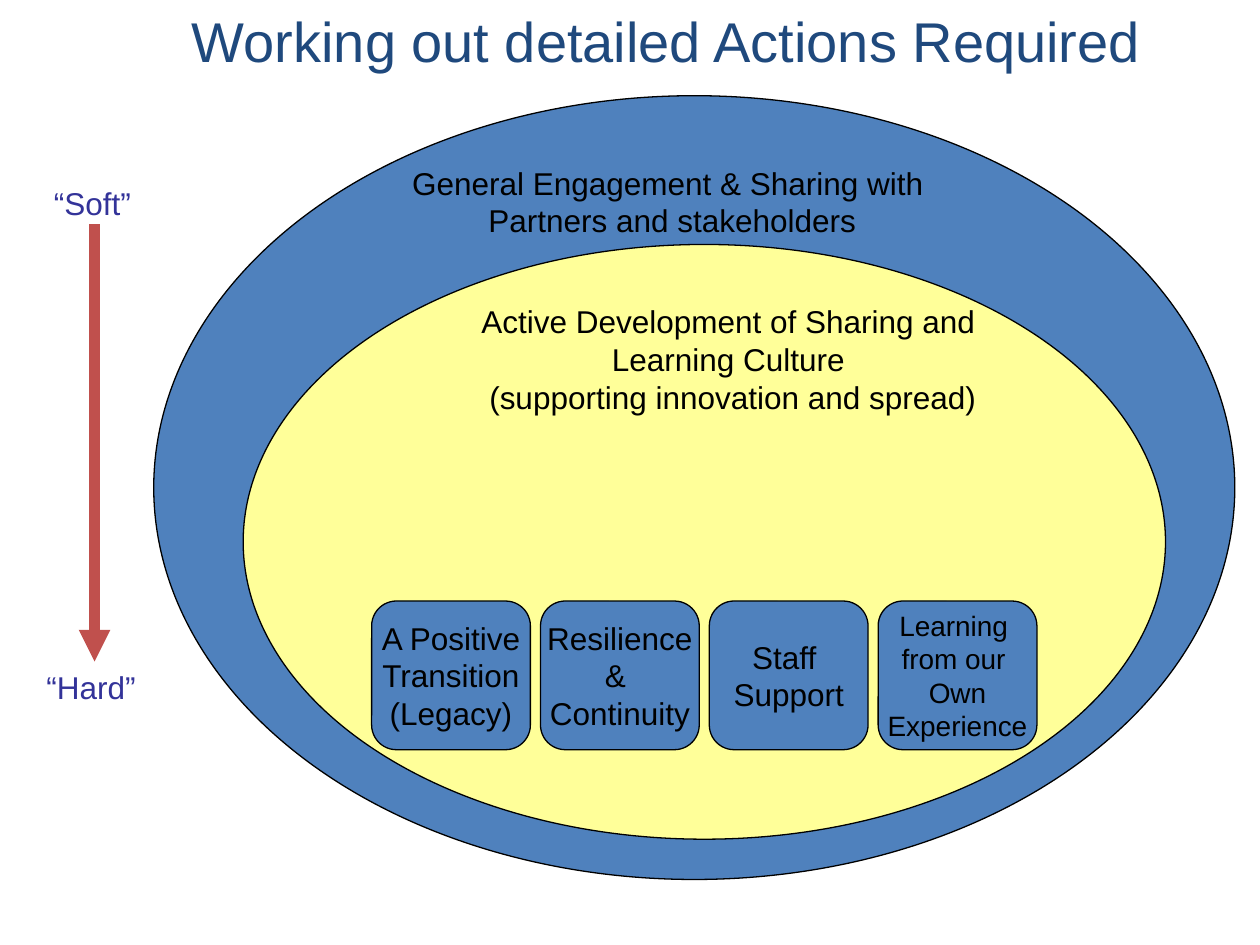
from lxml import etree
from pptx import Presentation
from pptx import util as u
from pptx.dml.color import RGBColor
from pptx.enum import shapes, text
from pptx.oxml.ns import qn

BLACK = RGBColor(0x00, 0x00, 0x00)
BLUE = RGBColor(0x4F, 0x81, 0xBD)
YELLOW = RGBColor(0xFF, 0xFF, 0x99)
INDIGO = RGBColor(0x33, 0x33, 0x99)
RED = RGBColor(0xC0, 0x50, 0x4D)
NAVY = RGBColor(0x1F, 0x49, 0x7D)

FONT = "Arial"
CENTER, LEFT = text.PP_ALIGN.CENTER, text.PP_ALIGN.LEFT
TOP, MIDDLE = text.MSO_ANCHOR.TOP, text.MSO_ANCHOR.MIDDLE
OVAL = shapes.MSO_SHAPE.OVAL
ROUNDED = shapes.MSO_SHAPE.ROUNDED_RECTANGLE

TITLE = "Working out detailed Actions Required"
RINGS = [
    ((1.22, 0.76, 8.58, 6.22), BLUE, (3.17, 1.25, 4.33, 0.7),
     ["General Engagement & Sharing with ", "Partners and stakeholders"]),
    ((1.93, 1.94, 7.32, 4.72), YELLOW, (3.72, 2.35, 4.19, 1),
     ["Active Development of Sharing and ", "Learning Culture ",
      "(supporting innovation and spread)"]),
]
ACTIONS = [
    (["A Positive", "Transition", "(Legacy)"], 18),
    (["Resilience", "& ", "Continuity"], 18),
    (["Staff ", "Support"], 18),
    (["Learning ", "from our ", "Own", "Experience"], 16),
]
SCALE_ENDS = [
    ((0.33, 1.41, 0.81, 0.4), "“Soft”"),
    ((0.27, 5.25, 0.91, 0.4), "“Hard”"),
]
ACTION_LEFT, ACTION_TOP, ACTION_PITCH = 2.95, 4.77, 1.34
ACTION_W, ACTION_H = 1.26, 1.18
SCALE_X, SCALE_TOP, SCALE_BOTTOM = 0.75, 1.78, 5.25


def inches(box):
    return [u.Inches(v) for v in box]


def write(sp, lines, size=18, color=BLACK, align=CENTER, anchor=TOP, wrap=False):
    tf = sp.text_frame
    tf.word_wrap = wrap
    tf.vertical_anchor = anchor
    for i, line in enumerate(lines):
        p = tf.add_paragraph() if i else tf.paragraphs[0]
        p.alignment = align
        r = p.add_run()
        r.text = line
        r.font.name = FONT
        r.font.size = u.Pt(size)
        r.font.color.rgb = color


def add_outlined(s, kind, box, fill):
    sp = s.shapes.add_shape(kind, *inches(box))
    sp.shadow.inherit = False
    sp.fill.solid()
    sp.fill.fore_color.rgb = fill
    sp.line.color.rgb = BLACK
    sp.line.width = u.Pt(0.75)
    return sp


def add_label(s, box, lines, **style):
    write(s.shapes.add_textbox(*inches(box)), lines, **style)


def add_scale_arrow(s):
    line = s.shapes.add_connector(
        shapes.MSO_CONNECTOR.STRAIGHT,
        *inches((SCALE_X, SCALE_TOP, SCALE_X, SCALE_BOTTOM)))
    line.line.color.rgb = RED
    line.line.width = u.Pt(6)
    etree.SubElement(line.line._get_or_add_ln(), qn("a:tailEnd"), type="triangle")
    etree.SubElement(line._element.spPr, qn("a:effectLst"))


def main():
    prs = Presentation()
    prs.slide_width, prs.slide_height = u.Inches(10), u.Inches(7.5)
    s = prs.slides.add_slide(prs.slide_layouts[5])

    title = s.shapes.title
    title.left, title.top, title.width, title.height = inches((0, 0, 10.58, 0.63))
    write(title, [TITLE], size=32, color=NAVY, wrap=True)
    title.text_frame.auto_size = text.MSO_AUTO_SIZE.NONE

    for ring_box, fill, label_box, lines in RINGS:
        add_outlined(s, OVAL, ring_box, fill)
        add_label(s, label_box, lines)

    for i, (lines, size) in enumerate(ACTIONS):
        box = (ACTION_LEFT + i * ACTION_PITCH, ACTION_TOP, ACTION_W, ACTION_H)
        write(add_outlined(s, ROUNDED, box, BLUE), lines, size=size, anchor=MIDDLE)

    for box, label in SCALE_ENDS:
        add_label(s, box, [label], color=INDIGO, align=LEFT)
    add_scale_arrow(s)

    prs.save("out.pptx")


if __name__ == "__main__":
    main()
